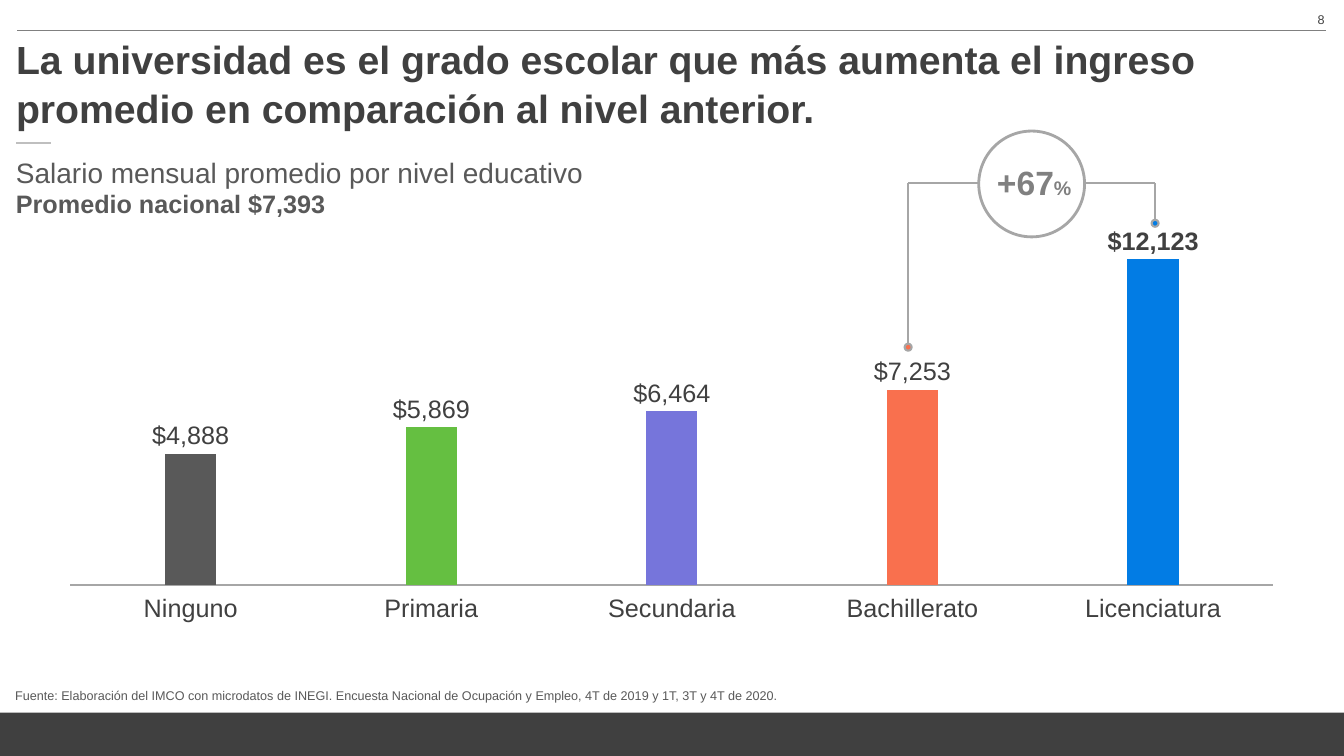
from lxml import etree
from pptx import Presentation
from pptx.chart.data import CategoryChartData
from pptx.dml.color import RGBColor
from pptx.enum.chart import XL_CHART_TYPE, XL_LABEL_POSITION, XL_TICK_LABEL_POSITION, XL_TICK_MARK
from pptx.enum.shapes import MSO_CONNECTOR, MSO_SHAPE
from pptx.enum.text import MSO_ANCHOR, MSO_AUTO_SIZE, PP_ALIGN
from pptx.oxml import parse_xml
from pptx.oxml.ns import nsdecls, qn
from pptx.util import Pt

COLUMNS = XL_CHART_TYPE.COLUMN_CLUSTERED
OUTSIDE_END = XL_LABEL_POSITION.OUTSIDE_END
NO_TICK = XL_TICK_MARK.NONE
LOW = XL_TICK_LABEL_POSITION.LOW
STRAIGHT = MSO_CONNECTOR.STRAIGHT
OVAL, RECTANGLE = MSO_SHAPE.OVAL, MSO_SHAPE.RECTANGLE
TOP, BOTTOM = MSO_ANCHOR.TOP, MSO_ANCHOR.BOTTOM
LEFT, CENTER, RIGHT = PP_ALIGN.LEFT, PP_ALIGN.CENTER, PP_ALIGN.RIGHT

FONT = "Arial"
COLORS = {
    "dark": "404040", "text": "595959", "gray": "808080", "line": "A6A6A6", "dash": "BFBFBF",
    "blue": "027CE4", "orange": "F9704E", "violet": "7675DB", "green": "65BF41",
}
SALARIES = [
    ("Licenciatura", 12123, "blue"),
    ("Bachillerato", 7253, "orange"),
    ("Secundaria", 6464, "violet"),
    ("Primaria", 5869, "green"),
    ("Ninguno", 4888, "text"),
]
MONEY = '"$"#,##0'
PLOT_AREA = {"x": 0.02, "y": 0.202, "w": 0.961, "h": 0.698}


def rgb(name):
    return RGBColor.from_string(COLORS[name])


def set_font(font, size, color, bold=False):
    font.name, font.size, font.bold = FONT, Pt(size), bold
    font.color.rgb = rgb(color)


def place(box, left, top, width, height):
    box.left, box.top, box.width, box.height = Pt(left), Pt(top), Pt(width), Pt(height)


def write(box, lines, color, align=LEFT, anchor=TOP):
    """Fill a box with (text, size, bold) lines, one paragraph each."""
    frame = box.text_frame
    frame.word_wrap = True
    frame.auto_size = MSO_AUTO_SIZE.NONE
    frame.vertical_anchor = anchor
    for index, (text, size, bold) in enumerate(lines):
        para = frame.add_paragraph() if index else frame.paragraphs[0]
        para.text = text
        para.alignment = align
        para.space_before = Pt(0)
        set_font(para.font, size, color, bold)
    return frame.paragraphs[0]


def add_text(page, bounds, lines, color, align=LEFT):
    box = page.shapes.add_textbox(*map(Pt, bounds))
    return write(box, lines, color, align)


def add_line(page, start, end, color, width):
    line = page.shapes.add_connector(STRAIGHT, *map(Pt, start + end))
    line.line.color.rgb = rgb(color)
    line.line.width = Pt(width)
    etree.SubElement(line._element.spPr, qn("a:effectLst"))


def add_shape(page, kind, bounds, fill=None, line=None, width=0):
    shape = page.shapes.add_shape(kind, *map(Pt, bounds))
    shape.shadow.inherit = False
    if fill:
        shape.fill.solid()
        shape.fill.fore_color.rgb = rgb(fill)
    else:
        shape.fill.background()
    if line:
        shape.line.color.rgb = rgb(line)
        shape.line.width = Pt(width)
    else:
        shape.line.fill.background()


def fix_plot_area(chart):
    """Pin the inner plot area to fractions of the chart frame."""
    plot_area = chart._chartSpace.chart.plotArea
    for old in plot_area.findall(qn("c:layout")):
        plot_area.remove(old)
    modes = "".join(f'<c:{side}Mode val="edge"/>' for side in "xy")
    sizes = "".join(f'<c:{side} val="{value}"/>' for side, value in PLOT_AREA.items())
    plot_area.insert(0, parse_xml(
        f'<c:layout {nsdecls("c")}><c:manualLayout><c:layoutTarget val="inner"/>'
        f"{modes}{sizes}</c:manualLayout></c:layout>"))


def add_salary_chart(page):
    levels, values, colors = zip(*SALARIES)
    data = CategoryChartData(number_format=MONEY)
    data.categories = levels
    data.add_series("Salario mensual", values)
    bounds = map(Pt, (32.4, 115.9, 894.2, 335.5))
    chart = page.shapes.add_chart(COLUMNS, *bounds, data).chart
    chart.has_legend = chart.has_title = False
    set_font(chart.font, 18, "dark")
    fix_plot_area(chart)

    level_axis = chart.category_axis
    level_axis.reverse_order = True
    level_axis.major_tick_mark = NO_TICK
    level_axis.tick_label_position = LOW
    level_axis.format.line.color.rgb = rgb("line")
    level_axis.format.line.width = Pt(1)
    salary_axis = chart.value_axis
    salary_axis.visible = salary_axis.has_major_gridlines = False
    salary_axis.minimum_scale, salary_axis.maximum_scale = 0, 12200

    plot = chart.plots[0]
    plot.gap_width = 369
    plot.vary_by_categories = False
    series = plot.series[0]
    for index, color in enumerate(colors):
        fill = series.points[index].format.fill
        fill.solid()
        fill.fore_color.rgb = rgb(color)
    labels = series.data_labels
    labels.show_value = True
    labels.number_format, labels.number_format_is_linked = MONEY, False
    labels.position = OUTSIDE_END
    set_font(labels.font, 18, "dark")
    highest = series.points[0].data_label
    set_font(highest.font, 18, "dark", True)
    highest.position = OUTSIDE_END


def add_increase(page):
    """Circle with the increase, tied to the two levels it compares."""
    para = add_text(page, (700.6, 120.2, 76.3, 27.4), [("+67", 24, True)], "gray", CENTER)
    para.line_spacing = 0.7
    percent = para.add_run()
    percent.text = "%"
    percent.font.size = Pt(14)
    add_shape(page, OVAL, (699.1, 93.6, 75.6, 75.6), line="line", width=2)
    arm_y, dot = 131, 5
    for edge, x, dot_y, color in ((774.7, 825.1, 159.5, "blue"), (699.1, 648.7, 248, "orange")):
        add_line(page, (edge, arm_y), (x, arm_y), "line", 1.5)
        add_line(page, (x, arm_y), (x, dot_y), "line", 1.5)
        add_shape(page, OVAL, (x - dot / 2, dot_y - dot / 2, dot, dot), color, "line", 1.5)


def add_source(page):
    box = page.placeholders[1]
    place(box, 3.6, 486.7, 935.3, 19.4)
    properties = box.text_frame.paragraphs[0]._p.get_or_add_pPr()
    properties.set("marL", "0")
    properties.set("indent", "0")
    etree.SubElement(properties, qn("a:buNone"))
    write(box, [("Fuente: Elaboración del IMCO con microdatos de INEGI. Encuesta Nacional de "
                 "Ocupación y Empleo, 4T de 2019 y 1T, 3T y 4T de 2020.", 9, False)],
          "text", anchor=BOTTOM)


def main():
    deck = Presentation()
    deck.slide_width, deck.slide_height = Pt(960), Pt(540)
    page = deck.slides.add_slide(deck.slide_layouts[1])

    add_shape(page, RECTANGLE, (0, 509, 960, 31), "dark")
    add_line(page, (12.2, 22), (947.5, 22), "gray", 0.75)
    add_salary_chart(page)
    add_text(page, (737.3, 5, 216, 28.8), [("8", 9, False)], "dark", RIGHT)

    title = page.shapes.title
    place(title, 4.3, 20.2, 943.2, 43.2)
    heading = write(title, [("La universidad es el grado escolar que más aumenta el ingreso "
                             "promedio en comparación al nivel anterior.", 28, True)], "dark")
    heading.line_spacing = 1.04
    add_source(page)

    add_line(page, (11.5, 102.2), (36.7, 102.2), "dash", 1.5)
    add_text(page, (4.3, 107.3, 535, 77.8), [
        ("Salario mensual promedio por nivel educativo", 20, False),
        ("Promedio nacional $7,393", 18, True),
    ], "text")
    add_increase(page)
    deck.save("out.pptx")


if __name__ == "__main__":
    main()
